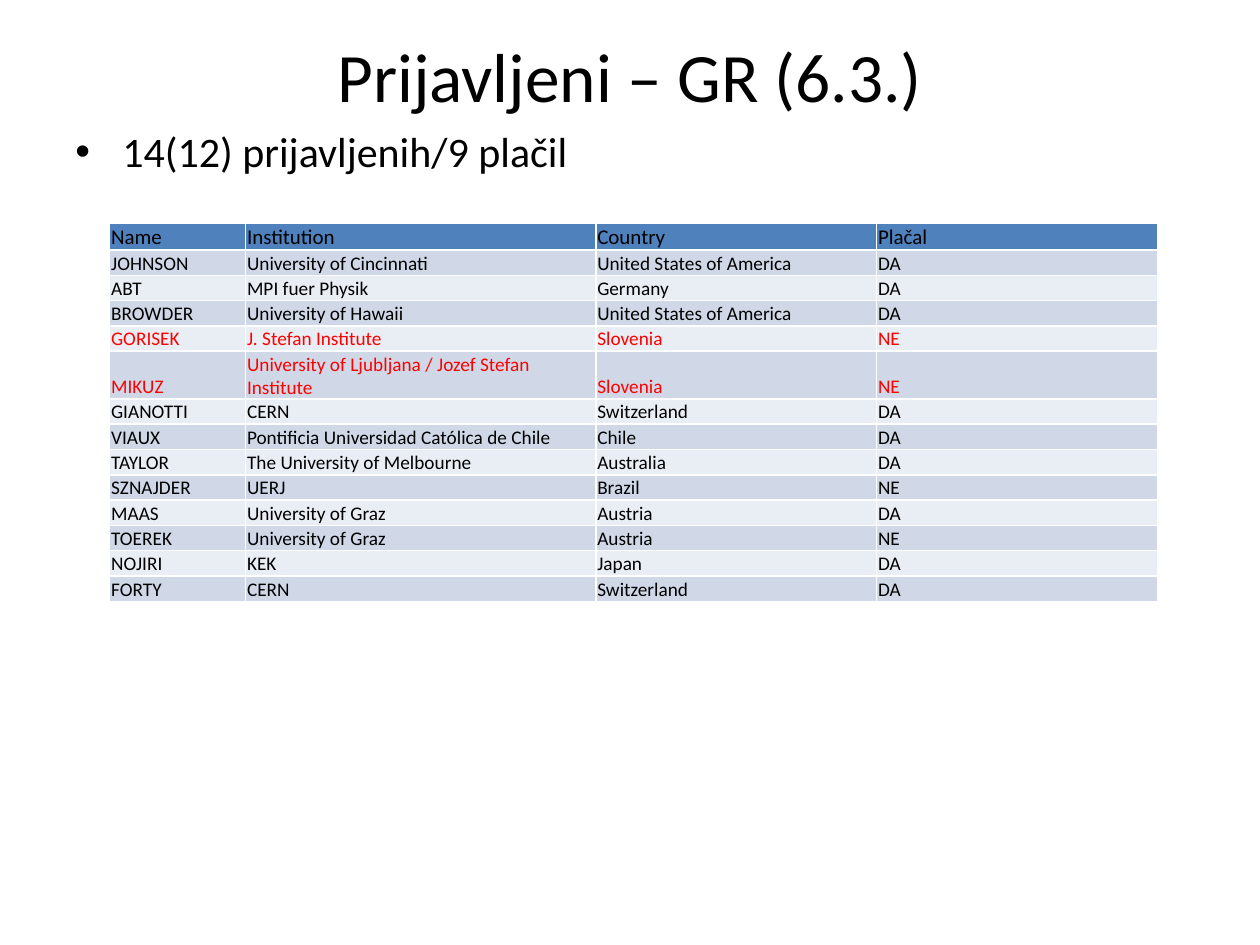
from lxml import etree
from pptx import Presentation
from pptx.dml.color import RGBColor
from pptx.enum import text
from pptx.oxml import ns
from pptx.util import Cm, Pt

TITLE = "Prijavljeni – GR (6.3.)"
COUNT = "14(12) prijavljenih/9 plačil"
HEAD = ("Name", "Institution", "Country", "Plačal")
GUESTS = [
    ("JOHNSON", "University of Cincinnati", "United States of America", "DA"),
    ("ABT", "MPI fuer Physik", "Germany", "DA"),
    ("BROWDER", "University of Hawaii", "United States of America", "DA"),
    ("GORISEK", "J. Stefan Institute", "Slovenia", "NE"),
    ("MIKUZ", "University of Ljubljana / Jozef Stefan Institute", "Slovenia", "NE"),
    ("GIANOTTI", "CERN", "Switzerland", "DA"),
    ("VIAUX", "Pontificia Universidad Católica de Chile", "Chile", "DA"),
    ("TAYLOR", "The University of Melbourne", "Australia", "DA"),
    ("SZNAJDER", "UERJ", "Brazil", "NE"),
    ("MAAS", "University of Graz", "Austria", "DA"),
    ("TOEREK", "University of Graz", "Austria", "NE"),
    ("NOJIRI", "KEK", "Japan", "DA"),
    ("FORTY", "CERN", "Switzerland", "DA"),
]
LOCAL = "Slovenia"
WIDTHS = (2.74, 7.06, 5.66, 5.66)
ROW = 0.51
COLORS = {"ink": "000000", "local": "FF0000", "head": "4F81BD",
          "odd": "D0D8E8", "even": "E9EDF4"}


def style(para, size, color="ink"):
    font = para.font
    font.name, font.size, font.bold = "Calibri", Pt(size), False
    font.color.rgb = RGBColor.from_string(COLORS[color])


def add_text(slide, words, top, height, size):
    """Add a full-width text box and return its frame and paragraph."""
    box = slide.shapes.add_textbox(Cm(1.27), Cm(top), Cm(22.86), Cm(height))
    frame = box.text_frame
    frame.word_wrap = True
    para = frame.paragraphs[0]
    para.text = words
    style(para, size)
    return frame, para


def add_bullet(para, indent):
    props = para._p.get_or_add_pPr()
    props.set("marL", str(Cm(indent)))
    props.set("indent", str(-Cm(indent)))
    etree.SubElement(props, ns.qn("a:buFont"), typeface="Arial")
    etree.SubElement(props, ns.qn("a:buChar"), char="•")


def fill_cell(cell, words, size, ink, fill):
    cell.text = words
    cell.vertical_anchor = text.MSO_ANCHOR.BOTTOM
    cell.margin_left = cell.margin_right = cell.margin_top = Cm(0.03)
    cell.margin_bottom = 0
    cell.fill.solid()
    cell.fill.fore_color.rgb = RGBColor.from_string(COLORS[fill])
    style(cell.text_frame.paragraphs[0], size, ink)


def add_guests(slide):
    rows = [HEAD, *GUESTS]
    table = slide.shapes.add_table(
        len(rows), len(HEAD), Cm(2.21), Cm(4.5),
        Cm(sum(WIDTHS)), Cm(ROW * len(rows))).table
    for col, width in zip(table.columns, WIDTHS):
        col.width = Cm(width)
    for r, row in enumerate(rows):
        table.rows[r].height = Cm(ROW)
        size = 11 if r else 12
        fill = ("even", "odd")[r % 2] if r else "head"
        ink = "local" if LOCAL in row else "ink"
        for c, words in enumerate(row):
            fill_cell(table.cell(r, c), words, size, ink, fill)


def main():
    deck = Presentation()
    deck.slide_width, deck.slide_height = Cm(25.4), Cm(19.05)
    slide = deck.slides.add_slide(deck.slide_layouts[6])

    frame, para = add_text(slide, TITLE, 0.76, 1.5, 39.6)
    frame.vertical_anchor = text.MSO_ANCHOR.MIDDLE
    para.alignment = text.PP_ALIGN.CENTER

    frame, para = add_text(slide, COUNT, 2.41, 12.57, 24)
    para.space_before = Pt(4.8)
    add_bullet(para, 0.95)

    add_guests(slide)
    deck.save("out.pptx")


if __name__ == "__main__":
    main()
